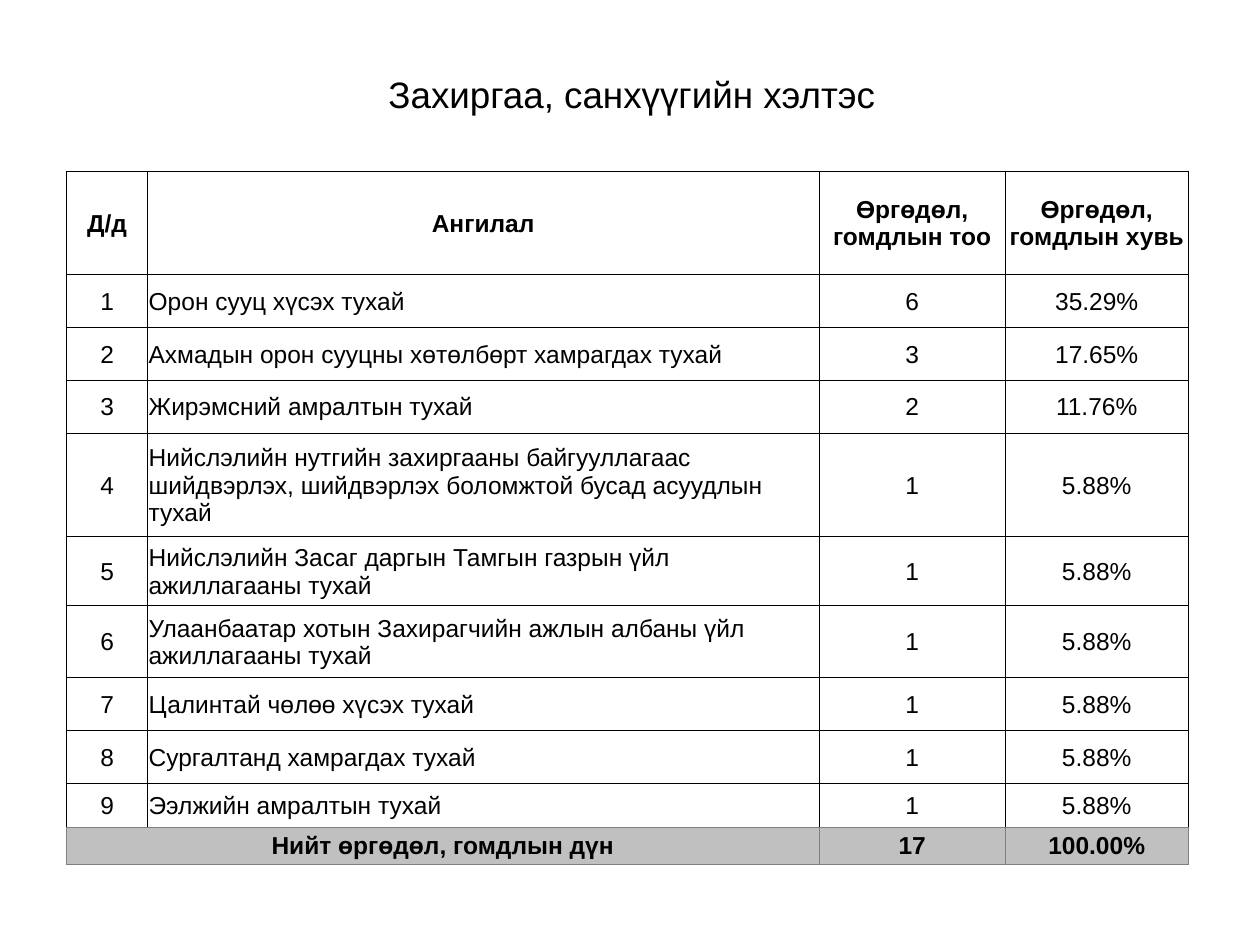
from dataclasses import dataclass

from lxml import etree
from pptx import Presentation
from pptx import util as u
from pptx.dml.color import RGBColor
from pptx.enum import text
from pptx.oxml.ns import qn


@dataclass(frozen=True)
class Theme:
    font: str = "Arial"
    title_size: float = 21
    table_size: float = 14
    ink: str = "000000"
    paper: str = "FFFFFF"
    total_fill: str = "C0C0C0"
    total_line: str = "808080"
    line_width: float = 0.5


THEME = Theme()
TITLE = "Захиргаа, санхүүгийн хэлтэс"
HEADER = ("Д/д", "Ангилал", "Өргөдөл, гомдлын тоо", "Өргөдөл, гомдлын хувь")
TOTAL = "Нийт өргөдөл, гомдлын дүн"
REQUESTS = [
    ("Орон сууц хүсэх тухай", 6),
    ("Ахмадын орон сууцны хөтөлбөрт хамрагдах тухай", 3),
    ("Жирэмсний амралтын тухай", 2),
    ("Нийслэлийн нутгийн захиргааны байгууллагаас шийдвэрлэх, "
     "шийдвэрлэх боломжтой бусад асуудлын тухай", 1),
    ("Нийслэлийн Засаг даргын Тамгын газрын үйл ажиллагааны тухай", 1),
    ("Улаанбаатар хотын Захирагчийн ажлын албаны үйл ажиллагааны тухай", 1),
    ("Цалинтай чөлөө хүсэх тухай", 1),
    ("Сургалтанд хамрагдах тухай", 1),
    ("Ээлжийн амралтын тухай", 1),
]
COLUMNS = (0.64, 5.33, 1.48, 1.45)
ROWS = (0.82, 0.42, 0.42, 0.42, 0.82, 0.55, 0.57, 0.42, 0.42, 0.35, 0.29)
TITLE_BOX = (1, 0.52, 8.03, 0.45)
TABLE_ORIGIN = (0.53, 1.36)


def table_rows():
    total = sum(count for _, count in REQUESTS)
    body = [(str(i), name, str(count), f"{count / total:.2%}")
            for i, (name, count) in enumerate(REQUESTS, 1)]
    return [HEADER, *body, (TOTAL, "", str(total), f"{1:.2%}")]


def write(tf, content, size, bold=False, align=text.PP_ALIGN.CENTER):
    tf.text = content
    p = tf.paragraphs[0]
    p.alignment = align
    for r in p.runs:
        r.font.name, r.font.size, r.font.bold = THEME.font, u.Pt(size), bold
        r.font.color.rgb = RGBColor.from_string(THEME.ink)


def set_borders(cell, colors):
    tc_pr = cell._tc.get_or_add_tcPr()
    for side, color in zip("LRTB", colors):
        ln = etree.SubElement(tc_pr, qn(f"a:ln{side}"), w=str(u.Pt(THEME.line_width)))
        fill = etree.SubElement(ln, qn("a:solidFill"))
        etree.SubElement(fill, qn("a:srgbClr"), val=color)


def add_title(s):
    sp = s.shapes.title
    sp.left, sp.top, sp.width, sp.height = map(u.Inches, TITLE_BOX)
    tf = sp.text_frame
    tf.word_wrap = True
    tf.vertical_anchor = text.MSO_ANCHOR.MIDDLE
    write(tf, TITLE, THEME.title_size)


def add_request_table(s):
    rows = table_rows()
    last = len(rows) - 1
    size = (sum(COLUMNS), sum(ROWS))
    table = s.shapes.add_table(len(rows), len(COLUMNS),
                               *map(u.Inches, TABLE_ORIGIN + size)).table
    table.first_row = table.horz_banding = False
    for column, width in zip(table.columns, COLUMNS):
        column.width = u.Inches(width)
    for row, height in zip(table.rows, ROWS):
        row.height = u.Inches(height)

    for i, values in enumerate(rows):
        line = THEME.total_line if i == last else THEME.ink
        bottom = THEME.total_line if i >= last - 1 else THEME.ink
        for j, value in enumerate(values):
            cell = table.cell(i, j)
            cell.margin_left = cell.margin_right = cell.margin_top = u.Inches(0.01)
            cell.margin_bottom = 0
            cell.vertical_anchor = text.MSO_ANCHOR.MIDDLE
            set_borders(cell, (line, line, line, bottom))
            cell.fill.solid()
            cell.fill.fore_color.rgb = RGBColor.from_string(
                THEME.total_fill if i == last else THEME.paper)
            is_name = j == 1 and 0 < i < last
            write(cell.text_frame, value, THEME.table_size, bold=i in (0, last),
                  align=text.PP_ALIGN.LEFT if is_name else text.PP_ALIGN.CENTER)
    table.cell(last, 0).merge(table.cell(last, 1))


def main():
    prs = Presentation()
    prs.slide_width, prs.slide_height = u.Inches(10), u.Inches(7.5)
    s = prs.slides.add_slide(prs.slide_layouts.get_by_name("Title Only"))
    add_title(s)
    add_request_table(s)
    prs.save("out.pptx")


if __name__ == "__main__":
    main()
